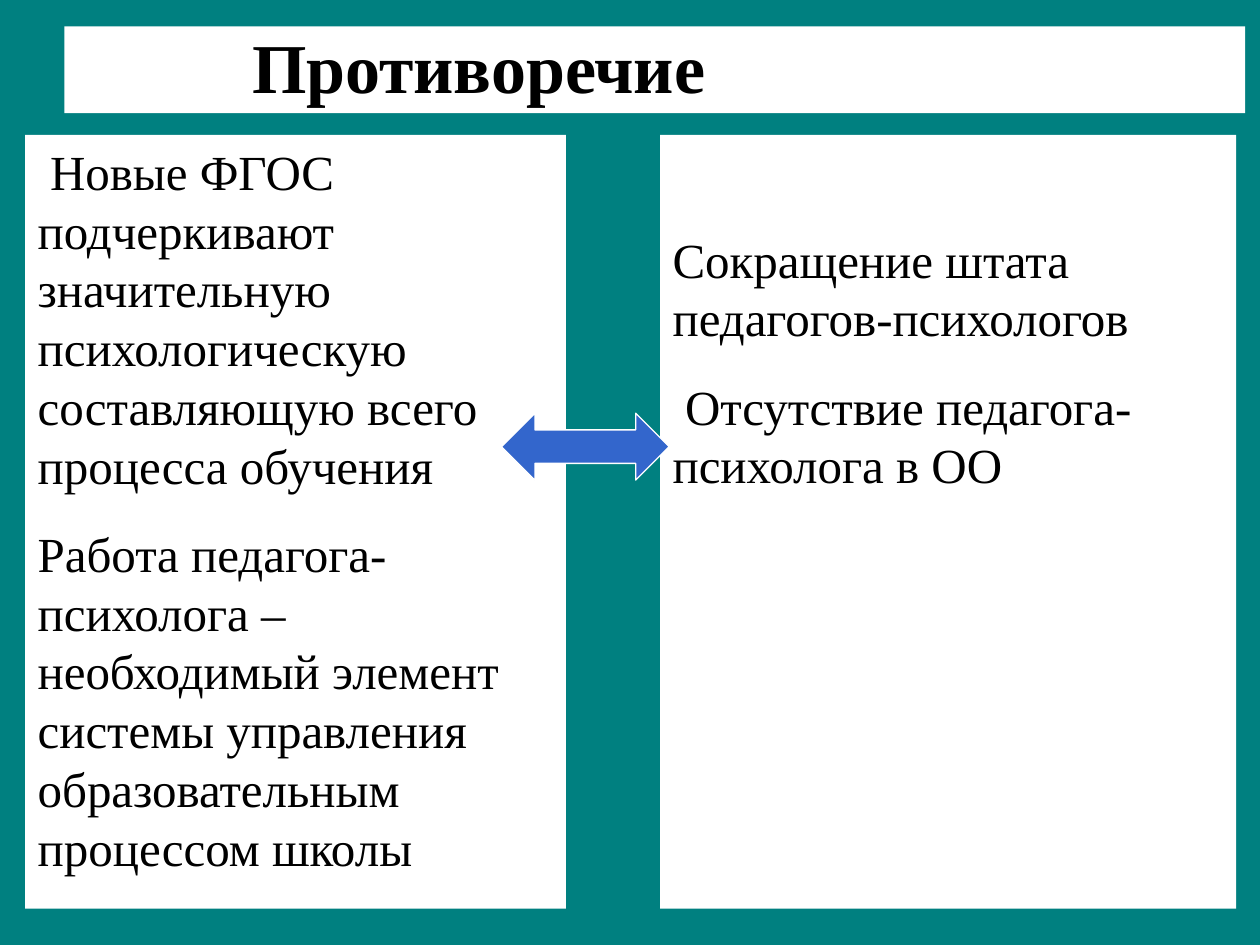
from pptx import Presentation
from pptx.dml.color import RGBColor
from pptx.enum.shapes import MSO_SHAPE as Shape
from pptx.enum.text import MSO_ANCHOR as Anchor, MSO_AUTO_SIZE as AutoSize, PP_ALIGN as Align
from pptx.util import Cm, Pt

COLORS = {"teal": "008080", "white": "FFFFFF", "black": "000000", "blue": "3366CC"}
FONT = "Times New Roman"


def color(name):
    return RGBColor.from_string(COLORS[name])


def write(para, text, size=28, bold=False, line=Pt(33.6), before=0, indent=0):
    """Put formatted text into a paragraph; indent applies to its first line."""
    props = para._p.get_or_add_pPr()
    props.set("marL", "0")
    props.set("indent", str(Cm(indent)))
    para.alignment = Align.LEFT
    para.line_spacing = line
    para.space_before = Pt(before)
    span = para.add_run()
    span.text = text
    span.font.name = FONT
    span.font.size = Pt(size)
    span.font.bold = bold
    span.font.color.rgb = color("black")


class Slide:
    def __init__(self, deck):
        self.page = deck.slides.add_slide(deck.slide_layouts[5])
        self.fill(self.page.background, "teal")

    def fill(self, item, name):
        item.fill.solid()
        item.fill.fore_color.rgb = color(name)

    def frame(self, box, anchor, left=0.25, top=0.13):
        self.fill(box, "white")
        frame = box.text_frame
        frame.word_wrap = True
        frame.auto_size = AutoSize.NONE
        frame.vertical_anchor = anchor
        frame.margin_left, frame.margin_top = Cm(left), Cm(top)
        frame.margin_right, frame.margin_bottom = Cm(0.25), Cm(0.13)
        return frame

    def title(self, text, left, top, width, height, inset):
        box = self.page.shapes.title
        box.left, box.top, box.width, box.height = map(Cm, (left, top, width, height))
        frame = self.frame(box, Anchor.BOTTOM, left=inset)
        write(frame.paragraphs[0], text, size=40, bold=True, line=0.8)

    def panel(self, items, left, top, width, height, inset=0.13):
        box = self.page.shapes.add_textbox(*map(Cm, (left, top, width, height)))
        frame = self.frame(box, Anchor.TOP, top=inset)
        for number, (text, indent) in enumerate(items):
            para = frame.add_paragraph() if number else frame.paragraphs[0]
            write(para, text, before=16.8 if number else 0, indent=indent)

    def arrow(self, left, top, width, height):
        arrow = self.page.shapes.add_shape(
            Shape.LEFT_RIGHT_ARROW, *map(Cm, (left, top, width, height)))
        arrow.shadow.inherit = False
        self.fill(arrow, "blue")
        arrow.line.color.rgb = color("white")
        arrow.line.width = Pt(0.75)


def main():
    deck = Presentation()
    deck.slide_width, deck.slide_height = Cm(25.4), Cm(19.05)
    slide = Slide(deck)

    # Heading
    slide.title("Противоречие", 1.3, 0.53, 23.8, 1.75, inset=3.78)

    # Two opposing sides: text and first-line indent
    top, height = 2.72, 15.6
    slide.panel([
        ("Новые ФГОС подчеркивают значительную психологическую "
         "составляющую всего процесса обучения", 0.25),
        ("Работа педагога-психолога –необходимый элемент системы "
         "управления образовательным процессом школы", 0),
    ], 0.51, top, 10.9, height)
    slide.panel([
        ("Сокращение штата педагогов-психологов", 0),
        ("Отсутствие педагога-психолога в ОО", 0.25),
    ], 13.31, top, 11.61, height, inset=1.9)

    # Arrow between the sides
    slide.arrow(10.11, 8.33, 3.38, 1.35)

    deck.save("out.pptx")


if __name__ == "__main__":
    main()
